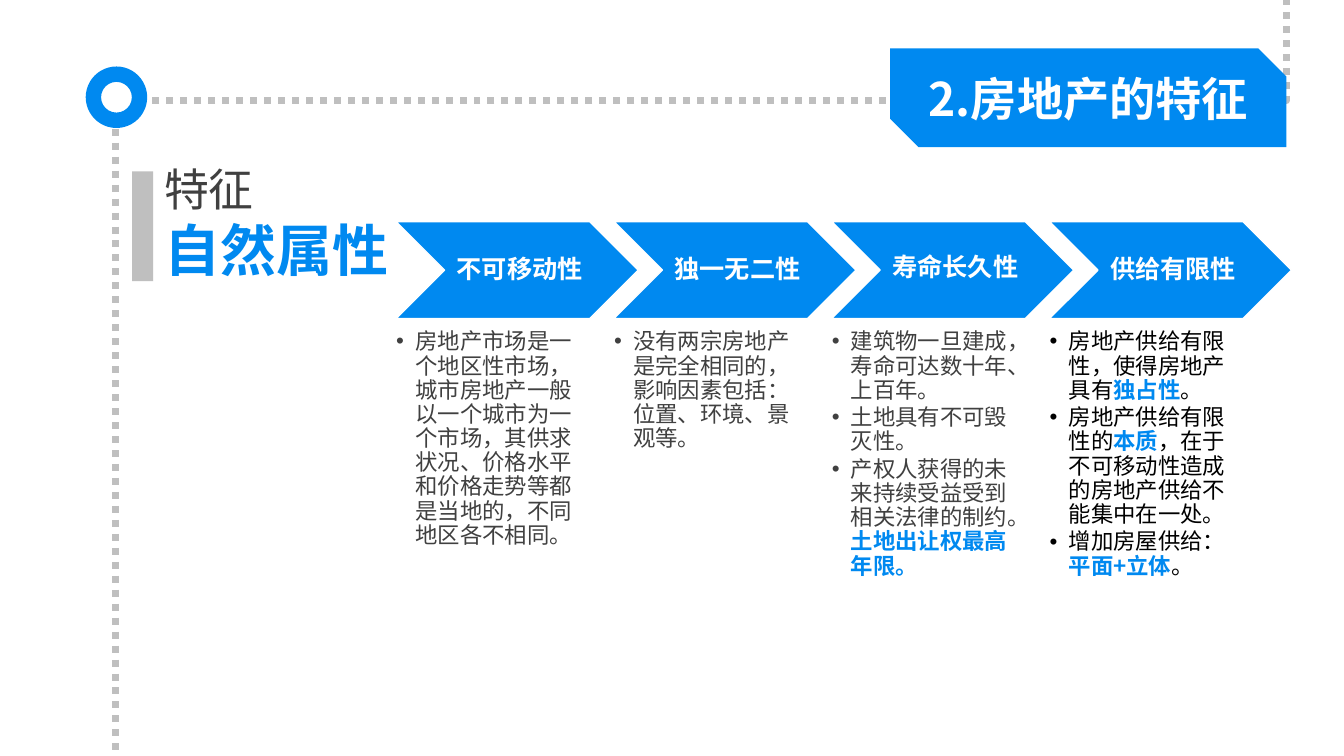
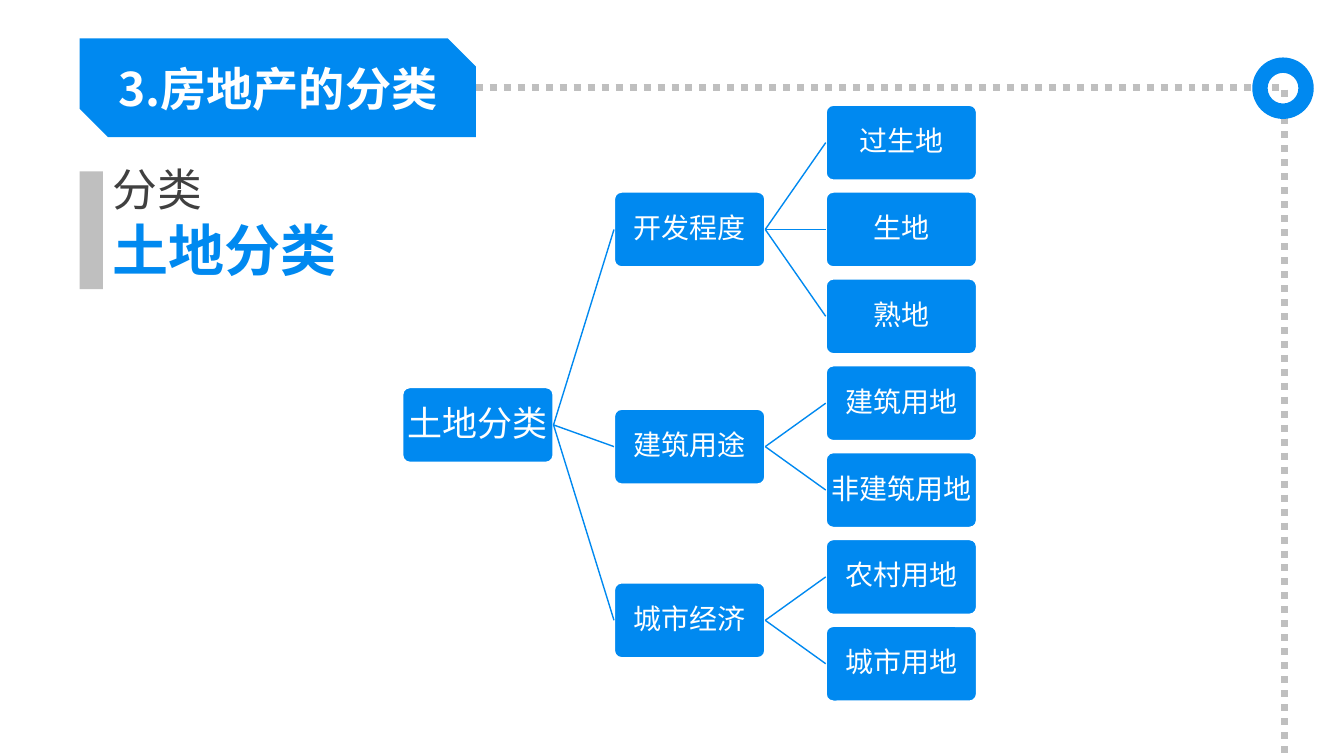
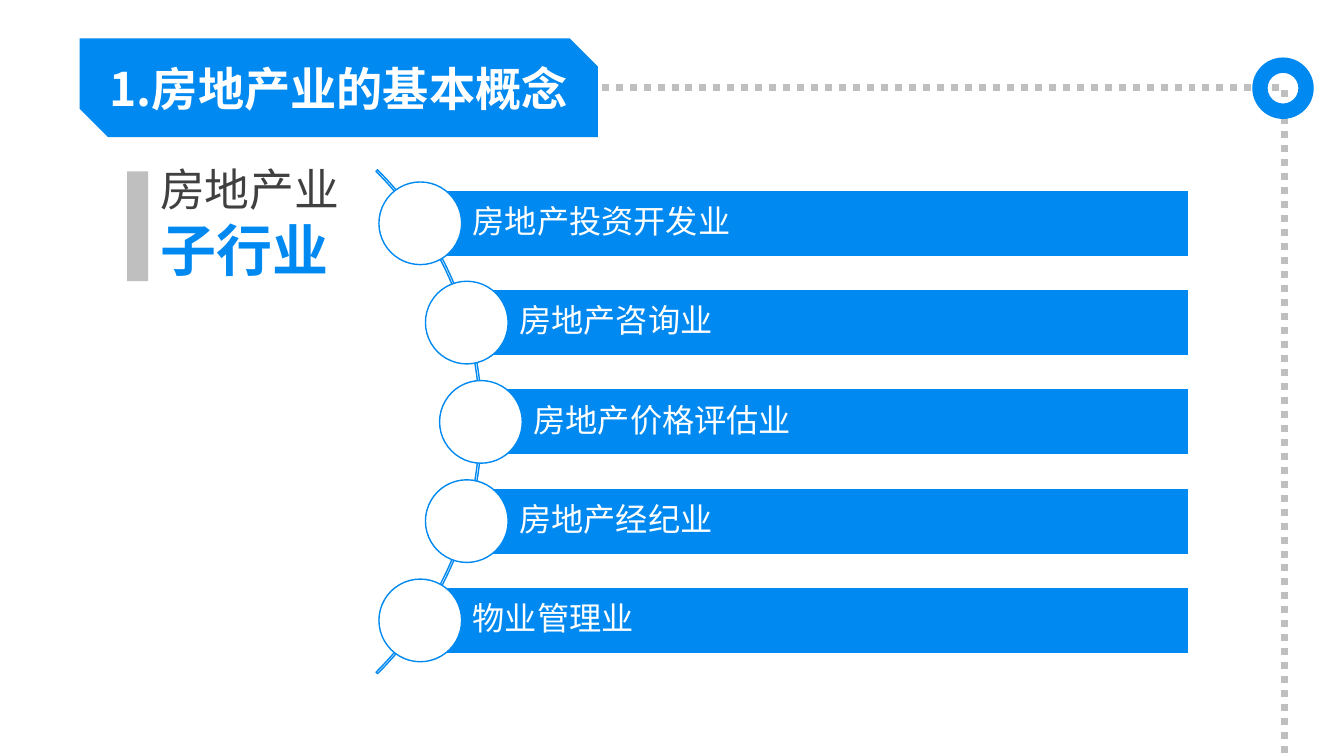
import math

from lxml import etree
from pptx import Presentation
from pptx.dml.color import RGBColor
from pptx.enum.dml import MSO_LINE
from pptx.enum.shapes import MSO_CONNECTOR, MSO_SHAPE
from pptx.enum.text import MSO_ANCHOR, PP_ALIGN
from pptx.oxml.ns import qn
from pptx.util import Pt

EMU_PER_PX = 9144
SLIDE_W, SLIDE_H = 1333, 750
FONT = "Noto Sans CJK SC"

BLUE = RGBColor(0x00, 0x89, 0xF0)
GREY = RGBColor(0xBF, 0xBF, 0xBF)
DARK = RGBColor(0x40, 0x40, 0x40)
BLACK = RGBColor(0, 0, 0)
WHITE = RGBColor(255, 255, 255)

RECT, ROUND_RECT = MSO_SHAPE.RECTANGLE, MSO_SHAPE.ROUNDED_RECTANGLE
CHEVRON, OVAL, DONUT = MSO_SHAPE.CHEVRON, MSO_SHAPE.OVAL, MSO_SHAPE.DONUT
SNIPPED, ARC = MSO_SHAPE.SNIP_2_DIAG_RECTANGLE, MSO_SHAPE.BLOCK_ARC
STRAIGHT, ELBOW = MSO_CONNECTOR.STRAIGHT, MSO_CONNECTOR.ELBOW
DOTS = MSO_LINE.ROUND_DOT
LEFT, CENTER = PP_ALIGN.LEFT, PP_ALIGN.CENTER
TOP, MIDDLE = MSO_ANCHOR.TOP, MSO_ANCHOR.MIDDLE
SIDE_LEFT, SIDE_RIGHT = 1, 3

# Within a paragraph, every second run is emphasised.
FEATURES = [
    ("不可移动性", 0.9, DARK, [
        ("房地产市场是一个地区性市场，城市房地产一般以一个城市为一个市场，"
         "其供求状况、价格水平和价格走势等都是当地的，不同地区各不相同。",)]),
    ("独一无二性", 0.9, DARK, [
        ("没有两宗房地产是完全相同的，影响因素包括：位置、环境、景观等。",)]),
    ("寿命长久性", 0.7, DARK, [
        ("建筑物一旦建成，寿命可达数十年、上百年。",),
        ("土地具有不可毁灭性。",),
        ("产权人获得的未来持续受益受到相关法律的制约。", "土地出让权最高年限。")]),
    ("供给有限性", 0.9, BLACK, [
        ("房地产供给有限性，使得房地产具有", "独占性", "。"),
        ("房地产供给有限性的", "本质", "，在于不可移动性造成的房地产供给不能集中在一处。"),
        ("增加房屋供给：", "平面+立体", "。")]),
]
LAND_ROOT = "土地分类"
LAND_BRANCHES = [
    ("开发程度", ["过生地", "生地", "熟地"]),
    ("建筑用途", ["建筑用地", "非建筑用地"]),
    ("城市经济", ["农村用地", "城市用地"]),
]
SUB_INDUSTRIES = ["房地产投资开发业", "房地产咨询业", "房地产价格评估业",
                  "房地产经纪业", "物业管理业"]


def px(length):
    return round(length * EMU_PER_PX)


def add_block(slide, kind, left, top, width, height, fill=BLUE, line=None,
              line_width=1, adjust=()):
    block = slide.shapes.add_shape(kind, px(left), px(top), px(width), px(height))
    block.shadow.inherit = False
    block.fill.solid()
    block.fill.fore_color.rgb = fill
    if line is None:
        block.line.fill.background()
    else:
        block.line.color.rgb = line
        block.line.width = Pt(line_width)
    for index, value in enumerate(adjust):
        block.adjustments[index] = value
    return block


def add_line(slide, start, end, color, width, kind=STRAIGHT, dash=None):
    line = slide.shapes.add_connector(
        kind, px(start[0]), px(start[1]), px(end[0]), px(end[1]))
    line.line.color.rgb = color
    line.line.width = Pt(width)
    if dash is not None:
        line.line.dash_style = dash
    etree.SubElement(line._element.spPr, qn("a:effectLst"))
    return line


def add_guide(slide, start, end, turn_x):
    """Dotted grey elbow whose vertical part runs at turn_x."""
    guide = add_line(slide, start, end, GREY, 5, ELBOW, DOTS)
    share = (turn_x - start[0]) / (end[0] - start[0])
    adjustments = guide._element.spPr.find(qn("a:prstGeom")).get_or_add_avLst()
    bend = etree.SubElement(adjustments, qn("a:gd"))
    bend.set("name", "adj1")
    bend.set("fmla", f"val {round(share * 100000)}")


def add_bullet(paragraph, indent):
    props = paragraph._p.get_or_add_pPr()
    props.set("marL", str(px(indent)))
    props.set("indent", str(-px(indent)))
    etree.SubElement(props, qn("a:buFont")).set("typeface", "Arial")
    etree.SubElement(props, qn("a:buChar")).set("char", "•")


def write(shape, paragraphs, size, color, bold=False, align=LEFT, anchor=TOP,
          insets=(10, 5, 10, 5), spacing=1.0, after=0, bullet_indent=0, wrap=True):
    """Append paragraphs, each a tuple of alternating plain and emphasised runs."""
    frame = shape.text_frame
    frame.word_wrap = wrap
    frame.vertical_anchor = anchor
    (frame.margin_left, frame.margin_top,
     frame.margin_right, frame.margin_bottom) = map(px, insets)
    for runs in paragraphs:
        paragraph = frame.add_paragraph() if frame.text else frame.paragraphs[0]
        paragraph.alignment = align
        paragraph.line_spacing = spacing
        paragraph.space_after = Pt(after)
        if bullet_indent:
            add_bullet(paragraph, bullet_indent)
        for index, words in enumerate(runs):
            emphasised = index % 2 == 1
            run = paragraph.add_run()
            run.text = words
            run.font.size = Pt(size)
            run.font.name = FONT
            run.font.bold = bold or emphasised
            run.font.color.rgb = BLUE if emphasised else color
            etree.SubElement(run._r.get_or_add_rPr(), qn("a:ea")).set("typeface", FONT)


def add_textbox(slide, left, top, width, height):
    return slide.shapes.add_textbox(px(left), px(top), px(width), px(height))


def add_banner(slide, title, left, top, width):
    height = 98
    banner = add_block(slide, SNIPPED, left, top, width, height, adjust=(0, 0.286))
    holder = slide.shapes.title
    holder.left, holder.top = px(left), px(top)
    holder.width, holder.height = px(width), px(height)
    write(holder, [(title,)], 33, WHITE, bold=True, align=CENTER, anchor=MIDDLE)
    banner._element.addnext(holder._element)


def add_heading(slide, topic, subtopic, text_left, marker):
    """Two-line heading; marker is (left, width, height) of its grey bar."""
    heading = add_textbox(slide, text_left, 156, 256, 131)
    write(heading, [(topic,)], 32, DARK)
    write(heading, [(subtopic,)], 40, BLUE, bold=True)
    left, width, height = marker
    add_block(slide, RECT, left, 170, width, height, fill=GREY)


def add_ring(slide, left, top):
    add_block(slide, DONUT, left, top, 61, 61, adjust=(0.25,))


def add_slide(deck):
    return deck.slides.add_slide(deck.slide_layouts[5])


def start_right_ring_slide(deck, title, banner_width):
    slide = add_slide(deck)
    add_guide(slide, (472, 87), (1687, 920), 1274)
    add_ring(slide, 1242, 57)
    add_banner(slide, title, 79, 38, banner_width)
    return slide


def build_features(deck):
    slide = add_slide(deck)
    add_guide(slide, (1211, -48), (115, 100), 1276)
    first_left, pitch = 393, 216
    for index, (name, spacing, color, points) in enumerate(FEATURES):
        left = first_left + index * pitch
        chevron = add_block(slide, CHEVRON, left, 220, 240, 96, line=WHITE)
        write(chevron, [(name,)], 18, WHITE, bold=True, align=CENTER, anchor=MIDDLE,
              insets=(8, 3, 3, 3), spacing=spacing)
        details = add_textbox(slide, left, 328, 192, 356)
        write(details, points, 16, color, insets=(0, 0, 0, 0), spacing=0.9,
              after=2.4, bullet_indent=19)
    add_heading(slide, "特征", "自然属性", 153, (131, 21, 109))
    add_banner(slide, "2.房地产的特征", 883, 48, 393)
    add_line(slide, (115, 100), (115, 778), GREY, 5, dash=DOTS)
    add_block(slide, OVAL, 99, 77, 34, 37, fill=WHITE)
    add_ring(slide, 85, 66)


def build_land_tree(deck):
    slide = start_right_ring_slide(deck, "3.房地产的分类", 393)
    add_heading(slide, "分类", "土地分类", 102, (79, 23, 117))
    first_left, column_pitch = 399, 210
    leaf_top, leaf_span = 104, 517
    leaf_count = sum(len(leaves) for _, leaves in LAND_BRANCHES)
    leaf_pitch = leaf_span / (leaf_count - 1)

    def add_node(name, level, top, size=20):
        node = add_block(slide, ROUND_RECT, first_left + level * column_pitch, top,
                         150, 75, line=WHITE, line_width=1.5, adjust=(0.1,))
        write(node, [(name,)], size, WHITE, align=CENTER, anchor=MIDDLE,
              insets=(1, 1, 1, 1), spacing=0.9, wrap=False)
        return node

    def join(parent, child):
        link = add_line(slide, (0, 0), (0, 0), BLUE, 1)
        link.begin_connect(parent, SIDE_RIGHT)
        link.end_connect(child, SIDE_LEFT)

    branches, branch_tops, row = [], [], 0
    for name, leaves in LAND_BRANCHES:
        tops = [leaf_top + (row + i) * leaf_pitch for i in range(len(leaves))]
        row += len(leaves)
        branch_tops.append((tops[0] + tops[-1]) / 2)
        branch = add_node(name, 1, branch_tops[-1])
        branches.append(branch)
        for leaf, top in zip(leaves, tops):
            join(branch, add_node(leaf, 2, top))
    root = add_node(LAND_ROOT, 0, (branch_tops[0] + branch_tops[-1]) / 2, size=25)
    for branch in branches:
        join(root, branch)


def build_sub_industries(deck):
    slide = start_right_ring_slide(deck, "1.房地产业的基本概念", 514)
    add_heading(slide, "房地产业", "子行业", 149, (126, 21, 109))
    arc_left, arc_top, arc_size = -229, 65, 707
    add_block(slide, ARC, arc_left, arc_top, arc_size, arc_size, fill=WHITE,
              line=BLUE, adjust=(189, 27, 0.003))
    center_x, center_y = arc_left + arc_size / 2, arc_top + arc_size / 2
    radius = arc_size / 2 - 1
    span, bar_right, bar_height, circle = 394, 1179, 66, 82
    pitch = span / (len(SUB_INDUSTRIES) - 1)
    for index, name in enumerate(SUB_INDUSTRIES):
        offset = index * pitch - span / 2
        x = center_x + math.sqrt(radius ** 2 - offset ** 2)
        y = center_y + offset
        bar = add_block(slide, RECT, x, y - bar_height / 2, bar_right - x, bar_height,
                        line=WHITE)
        write(bar, [(name,)], 23, WHITE, anchor=MIDDLE, insets=(52, 6, 6, 6),
              spacing=0.9)
        add_block(slide, OVAL, x - circle / 2, y - circle / 2, circle, circle,
                  fill=WHITE, line=BLUE)


def main():
    deck = Presentation()
    deck.slide_width, deck.slide_height = px(SLIDE_W), px(SLIDE_H)
    build_features(deck)
    build_land_tree(deck)
    build_sub_industries(deck)
    deck.save("out.pptx")


if __name__ == "__main__":
    main()
